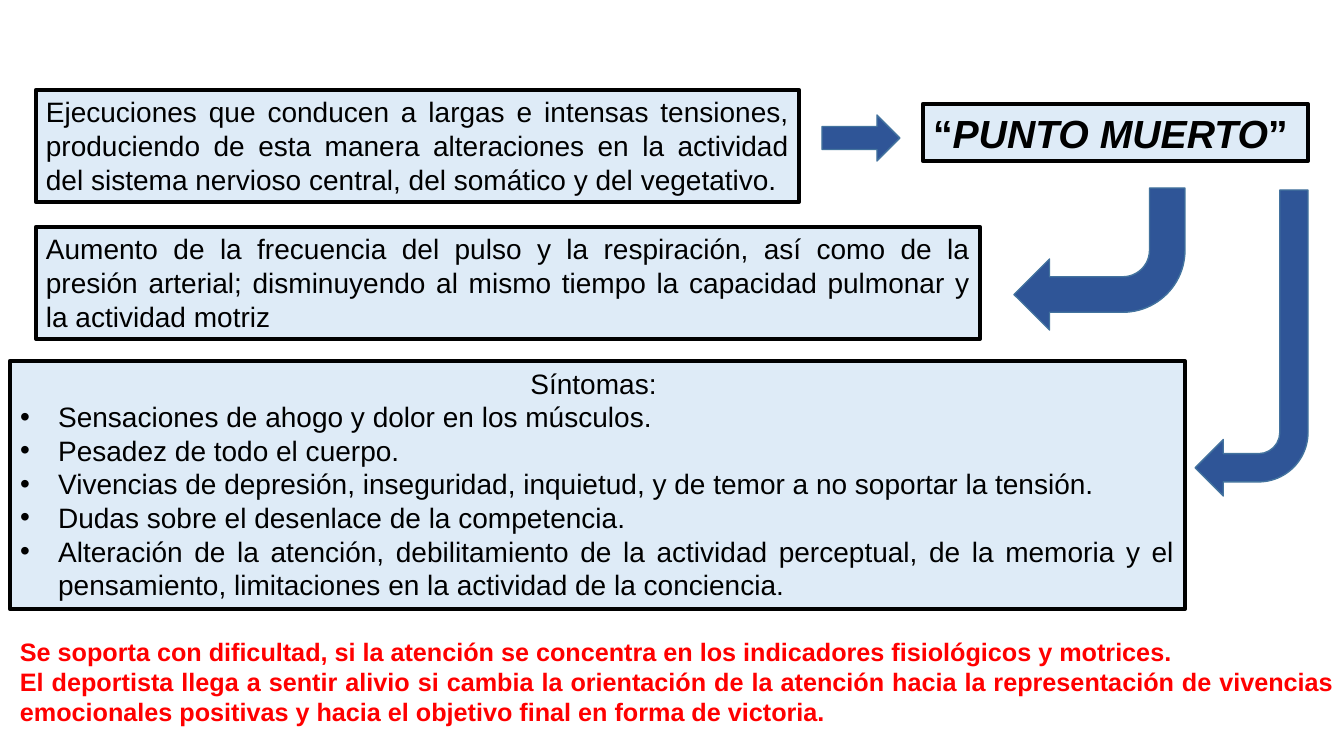
from lxml.etree import SubElement
from pptx import Presentation
from pptx.dml.color import RGBColor
from pptx.enum.shapes import MSO_SHAPE as Preset
from pptx.enum.text import MSO_ANCHOR as Anchor, MSO_AUTO_SIZE as AutoSize, PP_ALIGN as Align
from pptx.oxml.ns import qn
from pptx.util import Emu, Pt

PALE_BLUE = RGBColor(0xDE, 0xEB, 0xF7)
ARROW_BLUE = RGBColor(0x2F, 0x55, 0x97)
EDGE_BLUE = RGBColor(0x43, 0x73, 0x9E)
BLACK = RGBColor(0, 0, 0)
RED = RGBColor(0xFF, 0, 0)

TENSIONS = ("Ejecuciones que conducen a largas e intensas tensiones, produciendo de esta manera "
            "alteraciones en la actividad del sistema nervioso central, del somático y del vegetativo.")
PULSE = ("Aumento de la frecuencia del pulso y la respiración, así como de la presión arterial; "
         "disminuyendo al mismo tiempo la capacidad pulmonar y la actividad motriz")
SYMPTOMS = (
    "Sensaciones de ahogo y dolor en los músculos.",
    "Pesadez de todo el cuerpo.",
    "Vivencias de depresión, inseguridad, inquietud, y de temor a no soportar la tensión.",
    "Dudas sobre el desenlace de la competencia.",
    "Alteración de la atención, debilitamiento de la actividad perceptual, de la memoria y el "
    "pensamiento, limitaciones en la actividad de la conciencia.",
)
ADVICE = (
    "Se soporta con dificultad, si la atención se concentra en los indicadores fisiológicos y motrices.",
    "El deportista llega a sentir alivio si cambia la orientación de la atención hacia la "
    "representación de vivencias emocionales positivas y hacia el objetivo final en forma de victoria.",
)


def px(length):
    """Turn whole pixels into EMU."""
    return Emu(round(length * 914400 / 100.8))


def write(paragraph, text, size=20, color=BLACK, bold=False, italic=False, align=Align.JUSTIFY):
    """Add a formatted run to a paragraph."""
    paragraph.alignment = align
    paragraph.space_before = Pt(0)
    run = paragraph.add_run()
    run.text = text
    font = run.font
    font.name, font.size, font.bold, font.italic = "Arial", Pt(size), bold, italic
    font.color.rgb = color


def set_bullet(paragraph, char=None, indent=0):
    """Give a paragraph a hanging bullet, or none."""
    properties = paragraph._p.get_or_add_pPr()
    properties.set("marL", str(px(indent)))
    properties.set("indent", str(-px(indent)))
    if char:
        SubElement(properties, qn("a:buFont")).set("typeface", "Arial")
        SubElement(properties, qn("a:buChar")).set("char", char)
    else:
        SubElement(properties, qn("a:buNone"))


def place(panel, box, framed=True):
    """Move a text panel into its box and return its text frame."""
    panel.left, panel.top, panel.width, panel.height = map(px, box)
    if framed:
        panel.fill.solid()
        panel.fill.fore_color.rgb = PALE_BLUE
        panel.line.color.rgb = BLACK
        panel.line.width = Pt(3)
    frame = panel.text_frame
    frame.word_wrap = True
    frame.auto_size = AutoSize.NONE
    frame.vertical_anchor = Anchor.TOP
    return frame


def add_heading(slide, box):
    """Fill the title with the quoted name of the state."""
    heading = place(slide.shapes.title, box).paragraphs[0]
    for text, italic in (("“", False), ("PUNTO MUERTO", True), ("”", False)):
        write(heading, text, size=28, bold=True, italic=italic, align=Align.LEFT)


def add_symptoms(slide, box):
    """Fill the body with the caption and bulleted symptoms."""
    frame = place(slide.placeholders[1], box)
    caption = frame.paragraphs[0]
    set_bullet(caption)
    write(caption, "Síntomas: ", align=Align.CENTER)
    for symptom in SYMPTOMS:
        item = frame.add_paragraph()
        set_bullet(item, "•", 38)
        write(item, symptom)


def add_statement(slide, box, texts, framed=True, **style):
    """Add a text box with one paragraph per text."""
    frame = place(slide.shapes.add_textbox(*map(px, box)), box, framed)
    for index, text in enumerate(texts):
        write(frame.add_paragraph() if index else frame.paragraphs[0], text, **style)


def add_arrow(slide, box, preset, rotation=0):
    """Add a blue block arrow."""
    arrow = slide.shapes.add_shape(preset, *map(px, box))
    arrow.rotation = rotation
    arrow.shadow.inherit = False
    arrow.fill.solid()
    arrow.fill.fore_color.rgb = ARROW_BLUE
    arrow.line.color.rgb = EDGE_BLUE
    arrow.line.width = Pt(1)


def main():
    """Build and save the slide."""
    deck = Presentation()
    deck.slide_width, deck.slide_height = px(1344), px(756)
    slide = deck.slides.add_slide(deck.slide_layouts[1])
    add_statement(slide, (36, 90, 763, 112), [TENSIONS])
    add_heading(slide, (923, 104, 385, 57))
    add_statement(slide, (36, 227, 944, 112), [PULSE])
    add_symptoms(slide, (10, 361, 1175, 248))
    add_statement(slide, (10, 631, 1334, 102), ADVICE, framed=False, size=18, color=RED, bold=True)
    add_arrow(slide, (822, 115, 78, 46), Preset.RIGHT_ARROW)
    for box in ((1014, 188, 171, 142), (1195, 190, 113, 306)):
        add_arrow(slide, box, Preset.BENT_ARROW, rotation=180)
    deck.save("out.pptx")


if __name__ == "__main__":
    main()
